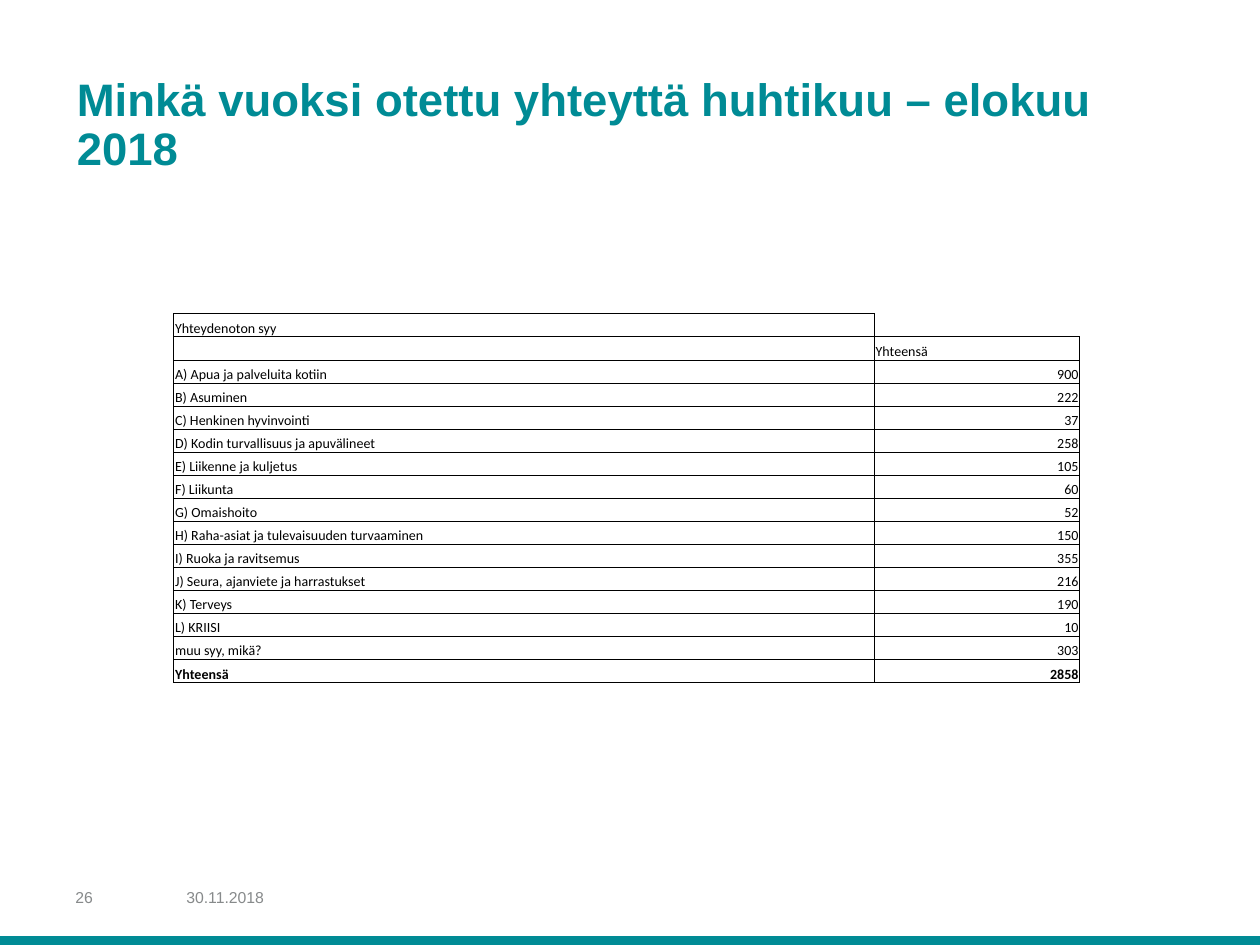
"""Build the slide on reasons for contact, April to August 2018."""
import pptx
import pptx.dml.color
import pptx.enum.shapes
import pptx.enum.text
import pptx.oxml
import pptx.oxml.ns
import pptx.util

Inches = pptx.util.Inches
Pt = pptx.util.Pt
Align = pptx.enum.text.PP_ALIGN
Anchor = pptx.enum.text.MSO_ANCHOR

TITLE = "Minkä vuoksi otettu yhteyttä huhtikuu – elokuu 2018"
REASONS = [
    ("Yhteydenoton syy", ""),
    ("", "Yhteensä"),
    ("A) Apua ja palveluita kotiin", 900),
    ("B) Asuminen", 222),
    ("C) Henkinen hyvinvointi", 37),
    ("D) Kodin turvallisuus ja apuvälineet", 258),
    ("E) Liikenne ja kuljetus", 105),
    ("F) Liikunta", 60),
    ("G) Omaishoito", 52),
    ("H) Raha-asiat ja tulevaisuuden turvaaminen", 150),
    ("I) Ruoka ja ravitsemus", 355),
    ("J) Seura, ajanviete ja harrastukset", 216),
    ("K) Terveys", 190),
    ("L) KRIISI", 10),
    ("muu syy, mikä?", 303),
    ("Yhteensä", 2858),
]
FOOTER = [("26", 0.5, 0.66), ("30.11.2018", 1.38, 1.65)]
COLUMN_WIDTHS = (5.56, 1.63)
TABLE_HEIGHT = 2.93
THEME = {
    "teal": "008B95", "grey": "878A8B", "black": "000000",
    "heading_font": "Arial", "table_font": "Calibri",
    "title_size": 26, "footer_size": 9, "table_size": 8, "border": 0.5,
}


def rgb(name):
    return pptx.dml.color.RGBColor.from_string(THEME[name])


def write(frame, text, *, size, font, color, bold=False, align=Align.LEFT, spacing=None):
    paragraph = frame.paragraphs[0]
    paragraph.alignment = align
    if spacing:
        paragraph.line_spacing = Pt(spacing)
    if not text:
        ending = pptx.oxml.parse_xml(
            f'<a:endParaRPr {pptx.oxml.ns.nsdecls("a")} sz="{THEME[size] * 100}"/>')
        paragraph._p.append(ending)
        return
    run = paragraph.add_run()
    run.text = text
    run.font.size = Pt(THEME[size])
    run.font.name = THEME[font]
    run.font.bold = bold
    run.font.color.rgb = rgb(color)


def draw_borders(cell, sides):
    properties = cell._tc.get_or_add_tcPr()
    for side in "LRTB":
        if side in sides:
            width = Pt(THEME["border"])
            paint = f'<a:solidFill><a:srgbClr val="{THEME["black"]}"/></a:solidFill>'
        else:
            width, paint = 0, "<a:noFill/>"
        properties.append(pptx.oxml.parse_xml(
            f'<a:ln{side} {pptx.oxml.ns.nsdecls("a")} w="{int(width)}">{paint}</a:ln{side}>'))


def add_title(slide):
    title = slide.shapes.title
    title.left, title.top = Inches(0.51), Inches(0.48)
    title.width, title.height = Inches(9), Inches(0.96)
    frame = title.text_frame
    frame.word_wrap = True
    frame.auto_size = pptx.enum.text.MSO_AUTO_SIZE.NONE
    frame.vertical_anchor = Anchor.BOTTOM
    write(frame, TITLE, size="title_size", font="heading_font", color="teal",
          bold=True, spacing=28)


def add_footer(slide):
    bar = slide.shapes.add_shape(pptx.enum.shapes.MSO_SHAPE.RECTANGLE,
                                 0, Inches(7.43), Inches(10), Inches(0.07))
    bar.shadow.inherit = False
    bar.fill.solid()
    bar.fill.fore_color.rgb = rgb("teal")
    bar.line.fill.background()
    for text, left, width in FOOTER:
        frame = slide.shapes.add_textbox(
            Inches(left), Inches(6.92), Inches(width), Inches(0.4)).text_frame
        frame.word_wrap = True
        frame.vertical_anchor = Anchor.MIDDLE
        write(frame, text, size="footer_size", font="heading_font", color="grey")


def add_reasons(slide):
    table = slide.shapes.add_table(
        len(REASONS), len(COLUMN_WIDTHS), Inches(1.38), Inches(2.49),
        Inches(sum(COLUMN_WIDTHS)), Inches(TABLE_HEIGHT)).table
    table.first_row = table.horz_banding = False
    for column, width in zip(table.columns, COLUMN_WIDTHS):
        column.width = Inches(width)
    for row_index, reason in enumerate(REASONS):
        table.rows[row_index].height = Inches(TABLE_HEIGHT / len(REASONS))
        for column_index, value in enumerate(reason):
            cell = table.cell(row_index, column_index)
            cell.margin_left = cell.margin_right = cell.margin_top = Inches(0.01)
            cell.margin_bottom = 0
            cell.vertical_anchor = Anchor.BOTTOM
            draw_borders(cell, "LB" if (row_index, column_index) == (0, 1) else "LRTB")
            cell.fill.background()
            write(cell.text_frame, str(value), size="table_size", font="table_font",
                  color="black", bold=row_index == len(REASONS) - 1,
                  align=Align.RIGHT if isinstance(value, int) else Align.LEFT)


def main():
    deck = pptx.Presentation()
    deck.slide_width, deck.slide_height = Inches(10), Inches(7.5)
    slide = deck.slides.add_slide(deck.slide_layouts.get_by_name("Title Only"))
    add_title(slide)
    add_footer(slide)
    add_reasons(slide)
    deck.save("out.pptx")


if __name__ == "__main__":
    main()
